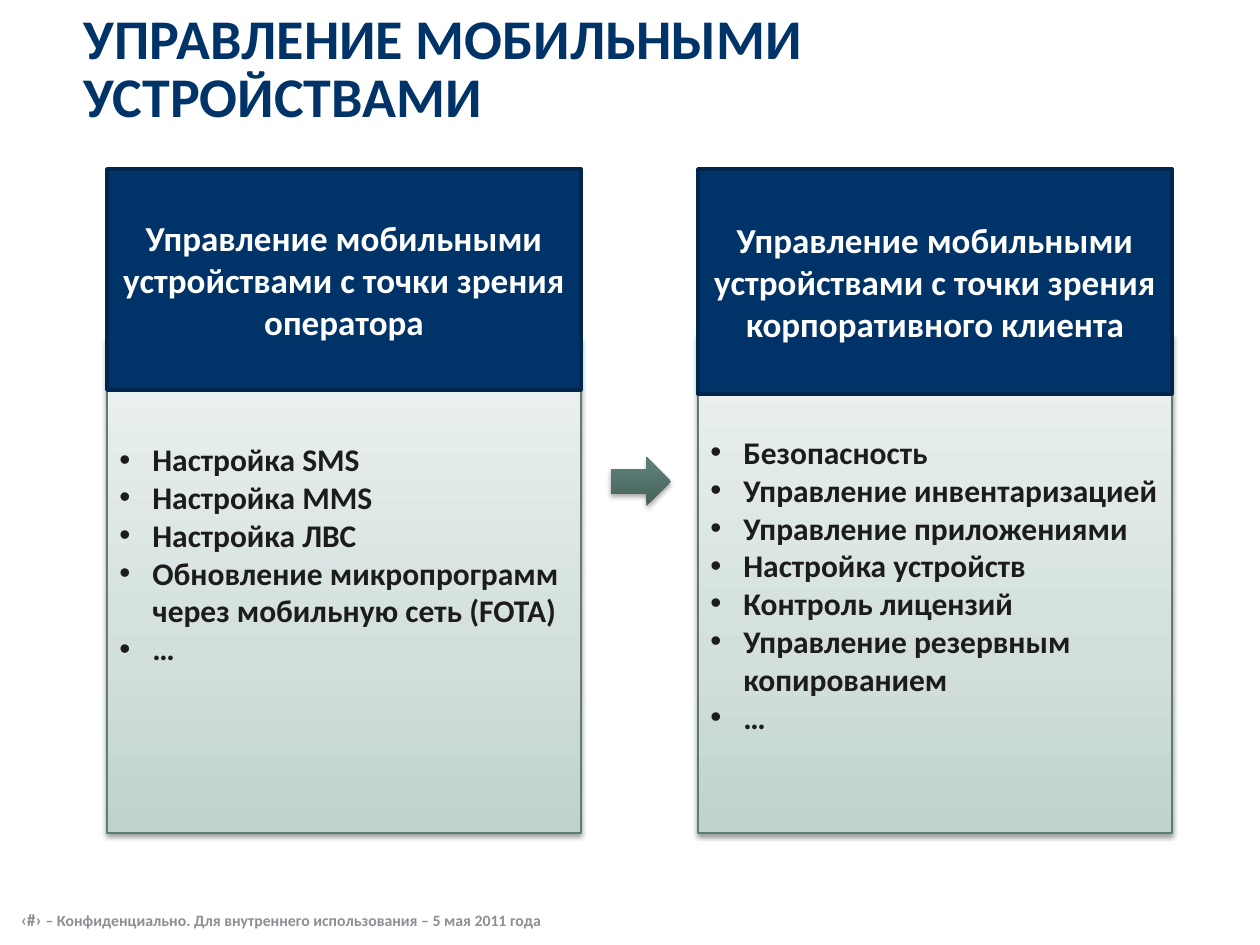
"""Builds a slide that sets two views of mobile device management side by side."""
from lxml import etree
from pptx import Presentation
from pptx.dml.color import RGBColor
from pptx.enum.shapes import MSO_SHAPE
from pptx.enum.text import MSO_ANCHOR, MSO_AUTO_SIZE, PP_ALIGN
from pptx.oxml.ns import qn
from pptx.util import Emu, Pt

RECT, ARROW = MSO_SHAPE.RECTANGLE, MSO_SHAPE.RIGHT_ARROW
MIDDLE, FIXED = MSO_ANCHOR.MIDDLE, MSO_AUTO_SIZE.NONE
LEFT, CENTER = PP_ALIGN.LEFT, PP_ALIGN.CENTER

TITLE = "УПРАВЛЕНИЕ МОБИЛЬНЫМИ УСТРОЙСТВАМИ"
PAGE = "‹#› "
NOTE = "– Конфиденциально. Для внутреннего использования – 5 мая 2011 года"
PANELS = [
    {
        "head": "Управление мобильными устройствами с точки зрения оператора",
        "items": ["Настройка SMS", "Настройка MMS", "Настройка ЛВС",
                  "Обновление микропрограмм через мобильную сеть (FOTA)", "…"],
        "deep": 221, "top": 338, "foot": 70,
    },
    {
        "head": "Управление мобильными устройствами с точки зрения корпоративного клиента",
        "items": ["Безопасность", "Управление инвентаризацией",
                  "Управление приложениями", "Настройка устройств",
                  "Контроль лицензий", "Управление резервным копированием", "…"],
        "deep": 225, "top": 335, "foot": 6,
    },
]
THEME = {
    "font": "Calibri",
    "title": (32, "003368"), "head": (20, "FFFFFF"), "item": (18, "1C1C1C"),
    "page": (10, "8E8E95"), "note": (9, "8E8E95"),
    "navy": "003368", "edge": "00264D", "rim": "5F7B75",
    "pale": [(0, "BFD2CD"), (35, "D2DFDC"), (100, "EEF3F2")],
    "dark": [(0, "46605A"), (80, "5B7D75"), (100, "5B7E76")],
}
START, STEP, WIDE = 107, 591, 474
HEAD_TOP, BASE = 169, 833
INDENT = 33


def px(n):
    return Emu(round(n * 914400 / 126))


def rgb(code):
    return RGBColor.from_string(code)


def node(root, tag, **attrs):
    return etree.SubElement(root, qn(tag), {k: str(v) for k, v in attrs.items()})


def place(item, *box):
    for key, n in zip(("left", "top", "width", "height"), box):
        setattr(item, key, px(n))


def setup(frame, **form):
    form = {"word_wrap": True, "auto_size": FIXED, "vertical_anchor": MIDDLE, **form}
    for key, value in form.items():
        setattr(frame, key, value)


def write(para, text, style):
    size, color = THEME[style]
    font = para.add_run().font
    para.runs[-1].text = text
    for key, value in {"name": THEME["font"], "size": Pt(size), "bold": True}.items():
        setattr(font, key, value)
    font.color.rgb = rgb(color)


def shape(slide, kind, box, line=None, weight=0):
    item = slide.shapes.add_shape(kind, *map(px, box))
    item.shadow.inherit = False
    if line:
        item.line.color.rgb = rgb(line)
        item.line.width = Pt(weight)
    else:
        item.line.fill.background()
    return item


def shade(item, stops, alpha, dist):
    item.fill.gradient()
    item.fill.gradient_angle = 90
    props = item._element.spPr
    ramp = props.find(qn("a:gradFill")).find(qn("a:gsLst"))
    for old in list(ramp):
        ramp.remove(old)
    for pos, color in stops:
        node(node(ramp, "a:gs", pos=pos * 1000), "a:srgbClr", val=color)
    cast = node(props.find(qn("a:effectLst")), "a:outerShdw", blurRad=Pt(3.1),
                dist=Pt(dist), dir=5400000, rotWithShape=0)
    node(node(cast, "a:srgbClr", val="000000"), "a:alpha", val=alpha * 1000)


def bullet(para):
    props = para._p.get_or_add_pPr()
    props.set("marL", str(px(INDENT)))
    props.set("indent", str(-px(INDENT)))
    node(node(props, "a:buClr"), "a:srgbClr", val=THEME["item"][1])
    node(props, "a:buFont", typeface="Arial")
    node(props, "a:buChar", char="•")


def panel(slide, left, data):
    box = left, data["top"], WIDE, BASE - data["top"]
    body = shape(slide, RECT, box, THEME["rim"], 0.75)
    shade(body, THEME["pale"], 38, 1.6)
    frame = body.text_frame
    setup(frame, margin_bottom=px(data["foot"]))
    for i, text in enumerate(data["items"]):
        para = frame.add_paragraph() if i else frame.paragraphs[0]
        bullet(para)
        para.alignment = LEFT
        write(para, text, "item")

    head = shape(slide, RECT, (left, HEAD_TOP, WIDE, data["deep"]), THEME["edge"], 2)
    head.fill.solid()
    head.fill.fore_color.rgb = rgb(THEME["navy"])
    setup(head.text_frame)
    para = head.text_frame.paragraphs[0]
    para.alignment = CENTER
    write(para, data["head"], "head")


def main():
    deck = Presentation()
    deck.slide_width, deck.slide_height = px(1260), px(945)
    slide = deck.slides.add_slide(deck.slide_layouts[5])

    title = slide.shapes.title
    place(title, 71, 6, 1140, 123)
    setup(title.text_frame, margin_bottom=0)
    para = title.text_frame.paragraphs[0]
    para.alignment = LEFT
    para.line_spacing = Pt(33)
    write(para, TITLE, "title")

    for i, data in enumerate(PANELS):
        panel(slide, START + i * STEP, data)
    arrow = shape(slide, ARROW, (611, 457, 60, 49))
    shade(arrow, THEME["dark"], 35, 1.8)

    foot = slide.shapes.add_textbox(*map(px, (21, 898, 547, 43))).text_frame
    setup(foot, margin_left=0, margin_top=0, margin_bottom=0)
    write(foot.paragraphs[0], PAGE, "page")
    write(foot.paragraphs[0], NOTE, "note")
    deck.save("out.pptx")


if __name__ == "__main__":
    main()
